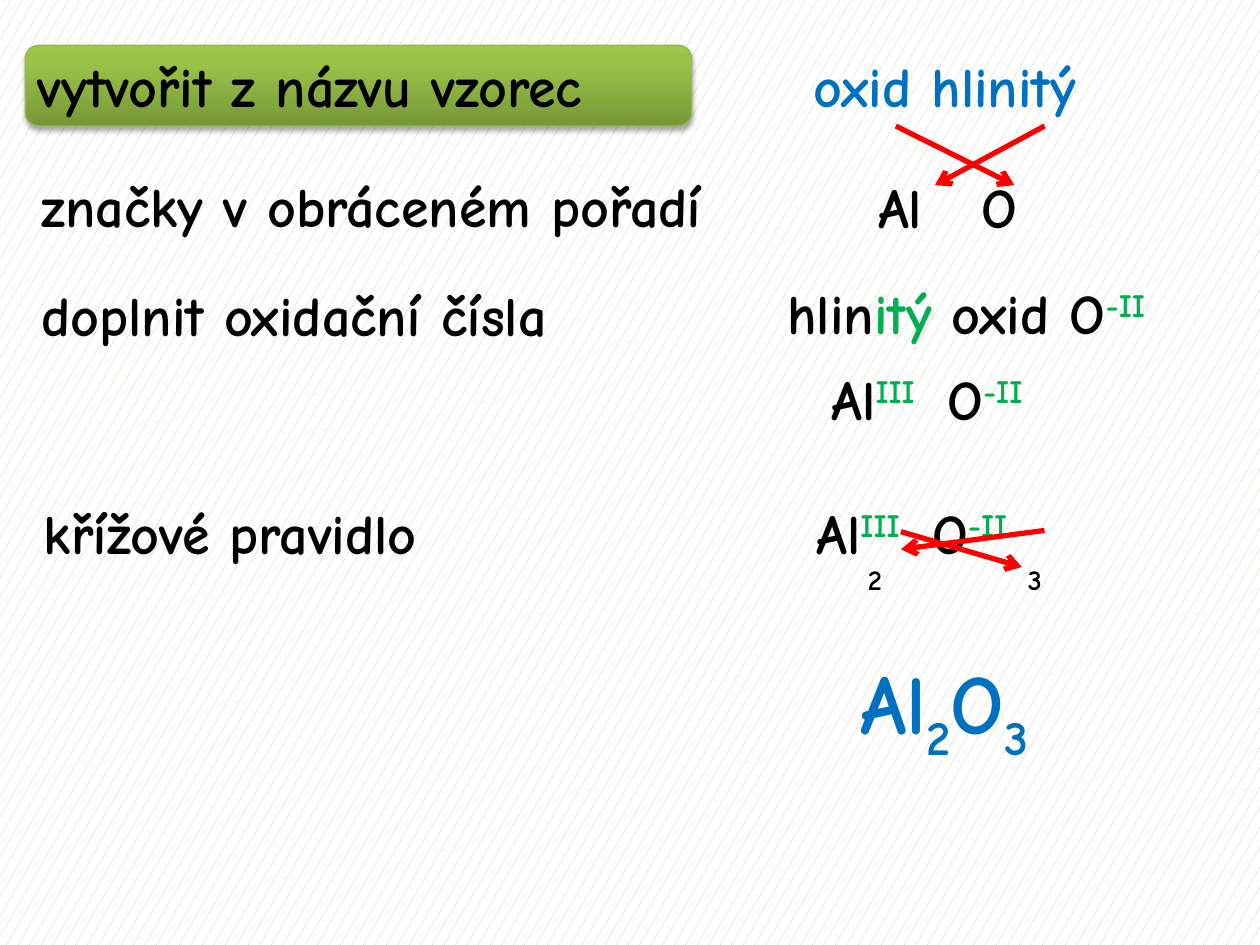
"""Build a slide that derives the formula of aluminium oxide from its name."""
import copy

import lxml.etree
import pptx
import pptx.dml.color
import pptx.enum.dml
import pptx.enum.shapes
import pptx.enum.text
import pptx.oxml.ns
import pptx.util

Inches = pptx.util.Inches
Pt = pptx.util.Pt
RGBColor = pptx.dml.color.RGBColor
qn = pptx.oxml.ns.qn

BLACK = RGBColor(0x00, 0x00, 0x00)
WHITE = RGBColor(0xFF, 0xFF, 0xFF)
BLUE = RGBColor(0x00, 0x70, 0xC0)
GREEN = RGBColor(0x00, 0xB0, 0x50)
RED = RGBColor(0xFF, 0x00, 0x00)
SAND = RGBColor(0xC4, 0xBD, 0x97)
BAR_DARK = RGBColor(0x77, 0x97, 0x37)
BAR_MIDDLE = RGBColor(0x9B, 0xC3, 0x48)
BAR_LIGHT = RGBColor(0x9D, 0xC7, 0x46)
BAR_EDGE = RGBColor(0x98, 0xB9, 0x55)
SUPER, SUB = 30, -25


def child(parent, tag, **attributes):
    element = lxml.etree.SubElement(parent, qn(tag))
    for name, value in attributes.items():
        element.set(name, str(value))
    return element


class FormulaSlide:
    font = "Comic Neue"
    line_height = 0.64

    def __init__(self, deck):
        self.slide = deck.slides.add_slide(deck.slide_layouts[5])
        fill = self.slide.background.fill
        fill.patterned()
        fill.pattern = pptx.enum.dml.MSO_PATTERN.SMALL_CONFETTI
        fill.fore_color.rgb = SAND
        fill.back_color.rgb = WHITE

    def fill_text(self, box, parts, size=32, tab=None):
        frame = box.text_frame
        frame.word_wrap = True
        frame.auto_size = pptx.enum.text.MSO_AUTO_SIZE.SHAPE_TO_FIT_TEXT
        frame.vertical_anchor = pptx.enum.text.MSO_ANCHOR.TOP
        para = frame.paragraphs[0]
        para.alignment = pptx.enum.text.PP_ALIGN.LEFT
        if tab:
            layout = next(box.element.iter(qn("a:pPr")))
            child(child(layout, "a:tabLst"), "a:tab", pos=Inches(tab), algn="l")
        for text, color, baseline in parts:
            span = para.add_run()
            span.text = text
            span.font.name = self.font
            span.font.size = Pt(size)
            span.font.bold = True
            span.font.color.rgb = color
            if baseline:
                properties = list(box.element.iter(qn("a:rPr")))[-1]
                properties.set("baseline", str(baseline * 1000))

    def title(self, text, left, top, width):
        box = self.slide.shapes.title
        box.left, box.top = Inches(left), Inches(top)
        box.width, box.height = Inches(width), Inches(self.line_height)
        self.fill_text(box, [(text, BLACK, 0)])

    def text(self, parts, left, top, width, height=line_height, **style):
        box = self.slide.shapes.add_textbox(
            Inches(left), Inches(top), Inches(width), Inches(height))
        self.fill_text(box, parts, **style)

    def bar(self, left, top, width):
        shapes = self.slide.shapes
        bar = shapes.add_shape(
            pptx.enum.shapes.MSO_SHAPE.ROUNDED_RECTANGLE,
            Inches(left), Inches(top), Inches(width), Inches(self.line_height))
        bar.fill.gradient()
        bar.fill.gradient_angle = 90
        properties = bar.element.spPr
        stops = properties.find(qn("a:gradFill")).find(qn("a:gsLst"))
        stops.insert(0, copy.deepcopy(stops[0]))
        colors = ((0, BAR_DARK), (0.8, BAR_MIDDLE), (1, BAR_LIGHT))
        for stop, (position, color) in zip(bar.fill.gradient_stops, colors):
            stop.position = position
            stop.color.rgb = color
        bar.line.color.rgb = BAR_EDGE
        bar.line.width = Pt(0.75)
        bar.shadow.inherit = False
        shadow = child(
            properties.find(qn("a:effectLst")), "a:outerShdw", blurRad=Pt(3.1),
            dist=Pt(1.8), dir=5400000, rotWithShape=0)
        child(child(shadow, "a:srgbClr", val=BLACK), "a:alpha", val=35000)
        shapes.element.insert(2, bar.element)

    def arrow(self, start, end):
        arrow = self.slide.shapes.add_connector(
            pptx.enum.shapes.MSO_CONNECTOR.STRAIGHT,
            *(Inches(value) for value in start + end))
        arrow.line.color.rgb = RED
        arrow.line.width = Pt(3)
        properties = arrow.element.spPr
        child(properties.find(qn("a:ln")), "a:tailEnd", type="arrow")
        child(properties, "a:effectLst")


def main():
    deck = pptx.Presentation()
    deck.slide_width, deck.slide_height = Inches(10), Inches(7.5)
    page = FormulaSlide(deck)

    page.bar(0.2, 0.36, 5.29)
    page.title("vytvořit z názvu vzorec", 0.2, 0.36, 5.29)
    page.text([("oxid hlinitý", BLUE, 0)], 6.36, 0.36, 2.62)

    for step, left, top, width in (
            ("značky v obráceném pořadí", 0.23, 1.31, 6.07),
            ("doplnit oxidační čísla", 0.23, 2.18, 4.71),
            ("křížové pravidlo", 0.25, 3.91, 3.6)):
        page.text([(step, BLACK, 0)], left, top, width)

    page.text([("Al\tO", BLACK, 0)], 6.87, 1.32, 1.59, tab=0.82)
    page.text([("hlin", BLACK, 0), ("itý", GREEN, 0), (" oxid O", BLACK, 0),
               ("-II", GREEN, SUPER)], 6.15, 2.16, 3.68)

    charges = [("Al", BLACK, 0), ("III\t", GREEN, SUPER), ("O", BLACK, 0),
               ("-II", GREEN, SUPER)]
    for left, top in ((6.5, 2.84), (6.38, 3.91)):
        page.text(charges, left, top, 2.4, tab=0.92)

    for start, end in (((7.11, 1), (8.05, 1.47)), ((8.29, 1), (7.42, 1.47)),
                       ((8.29, 4.21), (7.15, 4.36)), ((7.15, 4.22), (8.11, 4.5))):
        page.arrow(start, end)

    for count, left in (("2", 6.79), ("3", 8.06)):
        page.text([(count, BLACK, SUB)], left, 4.15, 0.36, 0.42, size=28)

    page.text([("Al", BLUE, 0), ("2", BLUE, SUB), ("O", BLUE, 0), ("3", BLUE, SUB)],
              6.73, 5.11, 1.96, 0.91, size=48)
    deck.save("out.pptx")


if __name__ == "__main__":
    main()
